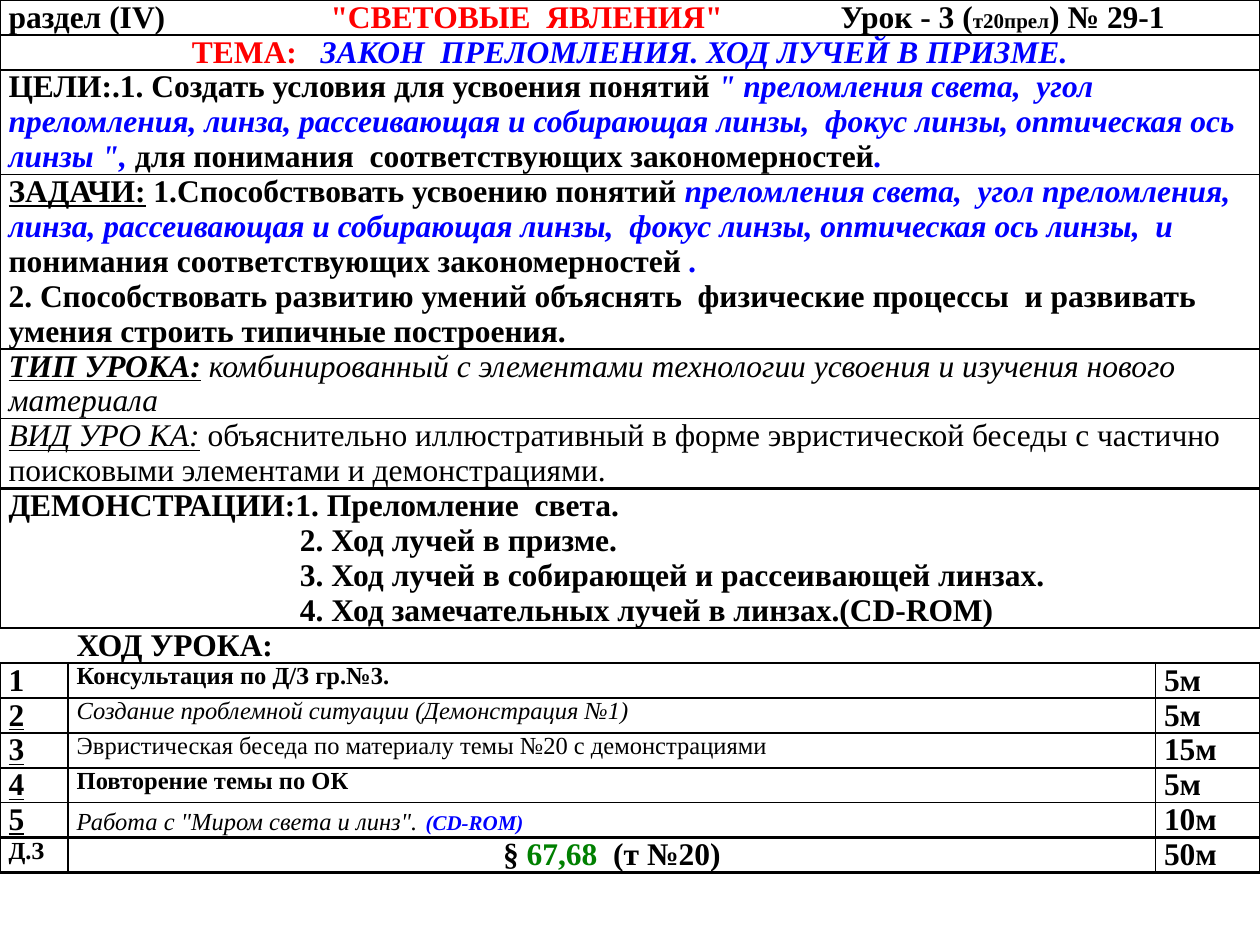
from lxml import etree
from pptx import Presentation
from pptx.dml.color import RGBColor
from pptx.enum.text import PP_ALIGN
from pptx.oxml.ns import qn
from pptx.util import Pt

CENTER = PP_ALIGN.CENTER
COLORS = {"black": "000000", "red": "FF0000", "blue": "0000FF", "green": "008000"}
BLANK_LAYOUT = 6
LINE_HEIGHT = 19.9
COLUMN_WIDTHS = [39, 621.3, 59.7]
THIN, THICK = 1, 1.5


def run(text, flags="b", color="black", size=18):
    """Describe a run; flags holds any of b (bold), i (italic), u (underlined)."""
    return text, flags, color, size


def line(*runs, align=None, indent=0, tabs=()):
    """Describe a paragraph."""
    return runs, align, indent, tabs


class PlanRow:
    """A table row: its cells, height in text lines and border widths."""

    def __init__(self, cells, lines=1, top=THIN, bottom=THIN, verticals=(THIN,) * 4):
        self.cells = cells
        self.lines = lines
        self.top = top
        self.bottom = bottom
        self.verticals = verticals


def stage_row(number, topic, minutes, top=THIN, bottom=THIN):
    cells = [[line(number)], [line(*topic)], [line(run(minutes))]]
    return PlanRow(cells, 1, top, bottom, (THICK, THICK, THIN, THIN))


HEADING_ROWS = [
    PlanRow([[line(run("раздел (IV)"), run("\t\"СВЕТОВЫЕ  ЯВЛЕНИЯ\"", color="red"),
                   run("\tУрок - 3 ("), run("т20прел", size=12), run(") № 29-1"),
                   tabs=(184, 475.5))]], bottom=THICK),
    PlanRow([[line(run("ТЕМА:   ", color="red"),
                   run("ЗАКОН  ПРЕЛОМЛЕНИЯ. ХОД ЛУЧЕЙ В ПРИЗМЕ.", "bi", "blue"),
                   align=CENTER)]],
            top=THICK, bottom=THICK, verticals=(THICK,) * 4),
    PlanRow([[line(run("ЦЕЛИ:.1. Создать условия для усвоения понятий "),
                   run("\" преломления света,  угол преломления, линза, рассеивающая и "
                       "собирающая линзы,  фокус линзы, оптическая ось линзы \", ", "bi", "blue"),
                   run("для понимания  соответствующих закономерностей"),
                   run(".", "bi", "blue"))]], lines=3, top=THICK),
    PlanRow([[line(run("ЗАДАЧИ:", "bu"), run(" 1.Способствовать усвоению понятий "),
                   run("преломления света,  угол преломления, линза, рассеивающая и "
                       "собирающая линзы,  фокус линзы, оптическая ось линзы,  и ", "bi", "blue"),
                   run("понимания соответствующих закономерностей "),
                   run(".", "bi", "blue")),
              line(run("2. Способствовать развитию умений объяснять  физические процессы  "
                       "и развивать умения строить типичные построения."))]], lines=5),
    PlanRow([[line(run("ТИП УРОКА:", "biu"),
                   run(" комбинированный с элементами технологии усвоения и изучения "
                       "нового материала", "i"))]], lines=2),
    PlanRow([[line(run("ВИД УРО КА:", "iu"),
                   run(" объяснительно иллюстративный в форме эвристической беседы с "
                       "частично поисковыми элементами и демонстрациями.", ""))]],
            lines=2, bottom=THICK),
    PlanRow([[line(run("ДЕМОНСТРАЦИИ:1. Преломление  света."))]
             + [line(run(text), indent=166.5) for text in (
                 "2. Ход лучей в призме.",
                 "3. Ход лучей в собирающей и рассеивающей линзах.",
                 "4. Ход замечательных лучей в линзах.(CD-ROM)")]],
            lines=4, top=THICK, bottom=THICK, verticals=(THICK,) * 4),
]

STAGE_ROWS = [
    PlanRow([[line()], [line(run("ХОД УРОКА:"))], [line()]],
            top=THICK, bottom=THICK, verticals=(0,) * 4),
    stage_row(run("1"), [run("Консультация по Д/З гр.№3.", size=14)], "5м", top=THICK),
    stage_row(run("2", "bu"),
              [run("Создание проблемной ситуации (Демонстрация №1)", "i", size=14)], "5м"),
    stage_row(run("3", "bu"),
              [run("Эвристическая беседа по материалу темы №20 с демонстрациями", "", size=14)],
              "15м"),
    stage_row(run("4", "bu"), [run("Повторение темы по ОК", size=14)], "5м"),
    stage_row(run("5", "bu"),
              [run("Работа с \"Миром света и линз\".", "i", size=14), run(" "),
               run("(CD-ROM)", "bi", "blue", 12)], "10м", bottom=THICK),
    PlanRow([[line(run("Д.З", size=14))],
             [line(run("§ "), run("67,68", color="green"), run("  (т №20)"), align=CENTER)],
             [line(run("50м"))]],
            top=THICK, bottom=THICK, verticals=(THICK, THIN, THIN, THICK)),
]


class SlideWriter:
    font_name = "Times New Roman"
    side_margin = 4.9

    def __init__(self, slide):
        self.slide = slide

    def add_plan(self, plan_rows):
        height = LINE_HEIGHT * sum(row.lines for row in plan_rows)
        table = self.slide.shapes.add_table(
            len(plan_rows), len(COLUMN_WIDTHS), Pt(0), Pt(0),
            Pt(sum(COLUMN_WIDTHS)), Pt(height)).table
        table.first_row = table.horz_banding = False
        for column, width in zip(table.columns, COLUMN_WIDTHS):
            column.width = Pt(width)
        for index, plan_row in enumerate(plan_rows):
            row = table.rows[index]
            row.height = Pt(LINE_HEIGHT * plan_row.lines)
            for position, cell in enumerate(row.cells):
                self.format_cell(cell, plan_row, position)
            if len(plan_row.cells) == 1:
                row.cells[0].merge(row.cells[len(COLUMN_WIDTHS) - 1])
            for cell, lines in zip(row.cells, plan_row.cells):
                self.write_lines(cell.text_frame, lines)

    def format_cell(self, cell, plan_row, position):
        cell.margin_left = cell.margin_right = Pt(self.side_margin)
        cell.margin_top = cell.margin_bottom = 0
        cell.fill.background()
        left, right = plan_row.verticals[position:position + 2]
        borders = {"L": left, "R": right, "T": plan_row.top, "B": plan_row.bottom}
        properties = cell._tc.get_or_add_tcPr()
        for order, (side, width) in enumerate(borders.items()):
            border = etree.Element(qn(f"a:ln{side}"), w=str(Pt(width)))
            properties.insert(order, border)
            if width:
                fill = etree.SubElement(border, qn("a:solidFill"))
                etree.SubElement(fill, qn("a:srgbClr"), val=COLORS["black"])
            else:
                etree.SubElement(border, qn("a:noFill"))

    def write_lines(self, text_frame, lines):
        for index, (runs, align, indent, tabs) in enumerate(lines):
            paragraph = text_frame.add_paragraph() if index else text_frame.paragraphs[0]
            paragraph.alignment = align
            if indent:
                paragraph._p.get_or_add_pPr().set("marL", str(Pt(indent)))
            if tabs:
                self.add_tabs(paragraph, tabs)
            for description in runs:
                self.add_run(paragraph, *description)
            if not runs:
                # Keeps an empty cell from stretching its row
                etree.SubElement(paragraph._p, qn("a:endParaRPr"), sz="1400")

    def add_tabs(self, paragraph, tabs):
        tab_list = etree.SubElement(paragraph._p.get_or_add_pPr(), qn("a:tabLst"))
        for position in tabs:
            etree.SubElement(tab_list, qn("a:tab"), pos=str(Pt(position)), algn="l")

    def add_run(self, paragraph, text, flags, color, size):
        text_run = paragraph.add_run()
        text_run.text = text
        font = text_run.font
        font.name = self.font_name
        font.size = Pt(size)
        font.bold = "b" in flags
        font.italic = "i" in flags
        font.underline = "u" in flags
        font.color.rgb = RGBColor.from_string(COLORS[color])


def main():
    presentation = Presentation()
    presentation.slide_width = Pt(720)
    presentation.slide_height = Pt(540)
    slide = presentation.slides.add_slide(presentation.slide_layouts[BLANK_LAYOUT])
    SlideWriter(slide).add_plan(HEADING_ROWS + STAGE_ROWS)
    presentation.save("out.pptx")


if __name__ == "__main__":
    main()
